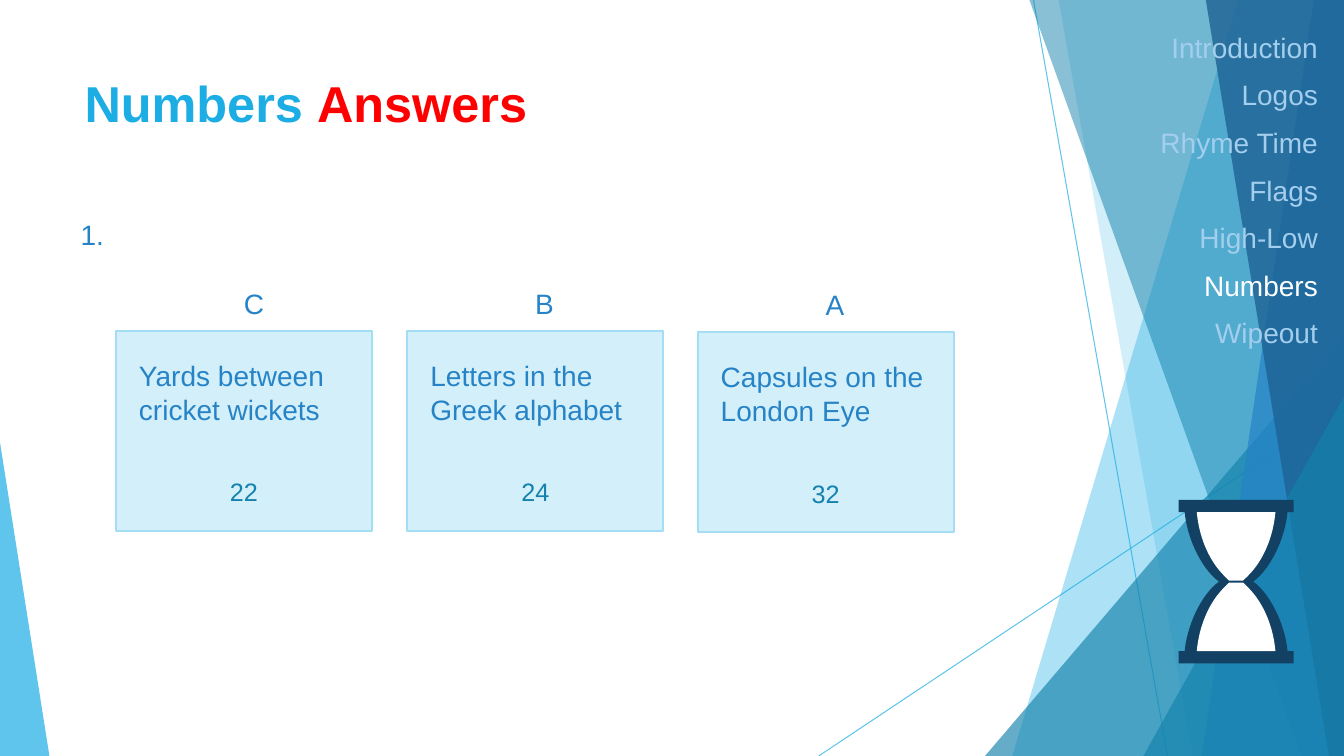
"""Build the Numbers answers slide of a quiz deck."""
from dataclasses import dataclass

import pptx
import pptx.dml.color
import pptx.enum.shapes
import pptx.enum.text
import pptx.oxml
import pptx.oxml.ns
import pptx.util

PX = 9144
FONT = "Arial"
COLORS = {
    "sky": "1CADE4", "teal": "1482AC", "blue": "2683C6", "navy": "1D6294",
    "red": "FF0000", "white": "FFFFFF", "card": "D2EFFA", "card_edge": "A4DEF4",
    "faded": "A3CEED", "hourglass": "134163",
}
ALIGN = pptx.enum.text.PP_ALIGN
ANCHOR = pptx.enum.text.MSO_ANCHOR
SHAPE = pptx.enum.shapes.MSO_SHAPE

Point = tuple[float, float]


@dataclass
class Facet:
    points: list[Point]
    color: str
    opacity: int


@dataclass
class Wedge:
    box: tuple[int, int, int, int]
    apex: int
    color: str
    opacity: int


@dataclass
class Ray:
    start: tuple[int, int]
    end: tuple[int, int]


@dataclass
class Card:
    left: int
    top: int
    letter: str
    question: str
    answer: str


RAYS = [Ray((1025, 0), (1158, 750)), Ray((1333, 403), (812, 750))]
BACKDROP = [
    Facet([(1228, 0), (1333, 0), (1333, 750), (1004, 750)], "sky", 36),
    Facet([(1050, 0), (1333, 0), (1333, 750), (1183, 750)], "sky", 20),
    Wedge((977, 333, 356, 417), 1, "teal", 66),
    Facet([(1021, 0), (1333, 0), (1333, 750), (1291, 750)], "teal", 50),
    Facet([(1303, 0), (1333, 0), (1333, 750), (1192, 750)], "blue", 70),
    Facet([(1196, 0), (1333, 0), (1333, 750), (1318, 750)], "navy", 80),
    Wedge((1134, 393, 199, 357), 1, "teal", 66),
    Wedge((0, 439, 49, 311), 0, "sky", 70),
]
CARDS = [
    Card(115, 328, "C", "Yards between cricket wickets", "22"),
    Card(404, 328, "B", "Letters in the Greek alphabet", "24"),
    Card(692, 329, "A", "Capsules on the London Eye", "32"),
]
ROUNDS = ["Introduction", "Logos", "Rhyme Time", "Flags", "High-Low", "Numbers", "Wipeout"]
CURRENT_ROUND = "Numbers"
HOURGLASS_CENTER = (1226, 577)


def px(length: float) -> int:
    return round(length * PX)


def rgb(color: str) -> pptx.dml.color.RGBColor:
    return pptx.dml.color.RGBColor.from_string(COLORS[color])


def set_opacity(element, opacity: int) -> None:
    for paint in element.iter(pptx.oxml.ns.qn("a:srgbClr")):
        alpha = pptx.oxml.parse_xml(f'<a:alpha {pptx.oxml.ns.nsdecls("a")} val="{opacity * 1000}"/>')
        paint.append(alpha)


def paint_shape(shape, color: str, opacity: int = 100) -> None:
    shape.shadow.inherit = False
    shape.fill.solid()
    shape.fill.fore_color.rgb = rgb(color)
    shape.line.fill.background()
    if opacity < 100:
        set_opacity(shape.fill._xPr, opacity)


def draw_outline(slide, points: list[Point], color: str, opacity: int = 100) -> None:
    corners = [(px(x), px(y)) for x, y in points]
    builder = slide.shapes.build_freeform(*corners[0], scale=1.0)
    builder.add_line_segments(corners[1:], close=True)
    paint_shape(builder.convert_to_shape(), color, opacity)


def draw_wedge(slide, wedge: Wedge) -> None:
    triangle = slide.shapes.add_shape(SHAPE.ISOSCELES_TRIANGLE, *map(px, wedge.box))
    triangle.adjustments[0] = wedge.apex
    paint_shape(triangle, wedge.color, wedge.opacity)


def draw_ray(slide, ray: Ray) -> None:
    ends = map(px, ray.start + ray.end)
    line = slide.shapes.add_connector(pptx.enum.shapes.MSO_CONNECTOR.STRAIGHT, *ends)
    line.line.color.rgb = rgb("sky")
    line.line.width = pptx.util.Pt(0.75)
    properties = line._element.spPr
    set_opacity(properties, 70)
    properties.append(pptx.oxml.parse_xml(f'<a:effectLst {pptx.oxml.ns.nsdecls("a")}/>'))


def style_font(font, size: int, color: str, bold: bool = False) -> None:
    font.name = FONT
    font.size = pptx.util.Pt(size)
    font.bold = bold
    font.color.rgb = rgb(color)


def add_text(slide, box: tuple[int, int, int, int], text: str, wrap: bool = True):
    frame = slide.shapes.add_textbox(*map(px, box)).text_frame
    frame.word_wrap = wrap
    frame.text = text
    for paragraph in frame.paragraphs:
        style_font(paragraph.runs[0].font, 20, "blue")
    return frame


def draw_title(slide) -> None:
    heading = add_text(slide, (74, 67, 940, 144), "Numbers ").paragraphs[0]
    style_font(heading.runs[0].font, 36, "sky", True)
    answers = heading.add_run()
    answers.text = "Answers"
    style_font(answers.font, 36, "red", True)


def draw_card(slide, card: Card) -> None:
    panel = slide.shapes.add_shape(SHAPE.RECTANGLE, px(card.left), px(card.top), px(254), px(199))
    paint_shape(panel, "card")
    panel.line.color.rgb = rgb("card_edge")
    panel.line.width = pptx.util.Pt(1.5)
    frame = panel.text_frame
    frame.text = card.answer
    frame.vertical_anchor = ANCHOR.BOTTOM
    frame.margin_bottom = px(24)
    frame.paragraphs[0].alignment = ALIGN.CENTER
    style_font(frame.paragraphs[0].runs[0].font, 18, "teal")
    add_text(slide, (card.left + 13, card.top + 23, 232, 77), card.question)
    add_text(slide, (card.left + 117, card.top - 49, 37, 44), card.letter, wrap=False)


def draw_rounds(slide) -> None:
    frame = add_text(slide, (1056, 25, 261, 452), "\n".join(ROUNDS))
    for paragraph in frame.paragraphs:
        paragraph.alignment = ALIGN.RIGHT
        paragraph.space_before = pptx.util.Pt(10)
        color = "white" if paragraph.text == CURRENT_ROUND else "faded"
        style_font(paragraph.runs[0].font, 20, color)


def bezier(start: Point, pull: Point, push: Point, end: Point, steps: int = 16) -> list[Point]:
    curve = []
    for step in range(steps + 1):
        t = step / steps
        weights = ((1 - t) ** 3, 3 * t * (1 - t) ** 2, 3 * t * t * (1 - t), t ** 3)
        knots = (start, pull, push, end)
        curve.append(tuple(sum(w * k[axis] for w, k in zip(weights, knots)) for axis in (0, 1)))
    return curve


def draw_hourglass(slide) -> None:
    center_x, center_y = HOURGLASS_CENTER

    def draw_mirrored(right_side: list[Point], color: str) -> None:
        outline = right_side + [(-x, y) for x, y in reversed(right_side)]
        draw_outline(slide, [(center_x + x, center_y + y) for x, y in outline], color)

    frame = [(57, -81), (57, -69), *bezier((51, -69), (49, -46), (36, -14), (17, 0))]
    bulb = [*bezier((39, -69), (37, -46), (28, -22), (12, -6)), (7, -1)]
    draw_mirrored(frame + [(x, -y) for x, y in reversed(frame)], "hourglass")
    for side in (1, -1):
        draw_mirrored([(x, side * y) for x, y in bulb], "white")


def main() -> None:
    deck = pptx.Presentation()
    deck.slide_width, deck.slide_height = px(1333), px(750)
    slide = deck.slides.add_slide(deck.slide_layouts[6])
    for ray in RAYS:
        draw_ray(slide, ray)
    for piece in BACKDROP:
        if isinstance(piece, Wedge):
            draw_wedge(slide, piece)
        else:
            draw_outline(slide, piece.points, piece.color, piece.opacity)
    draw_title(slide)
    add_text(slide, (70, 211, 45, 44), "1.", wrap=False)
    for card in CARDS:
        draw_card(slide, card)
    draw_rounds(slide)
    draw_hourglass(slide)
    deck.save("out.pptx")


if __name__ == "__main__":
    main()
